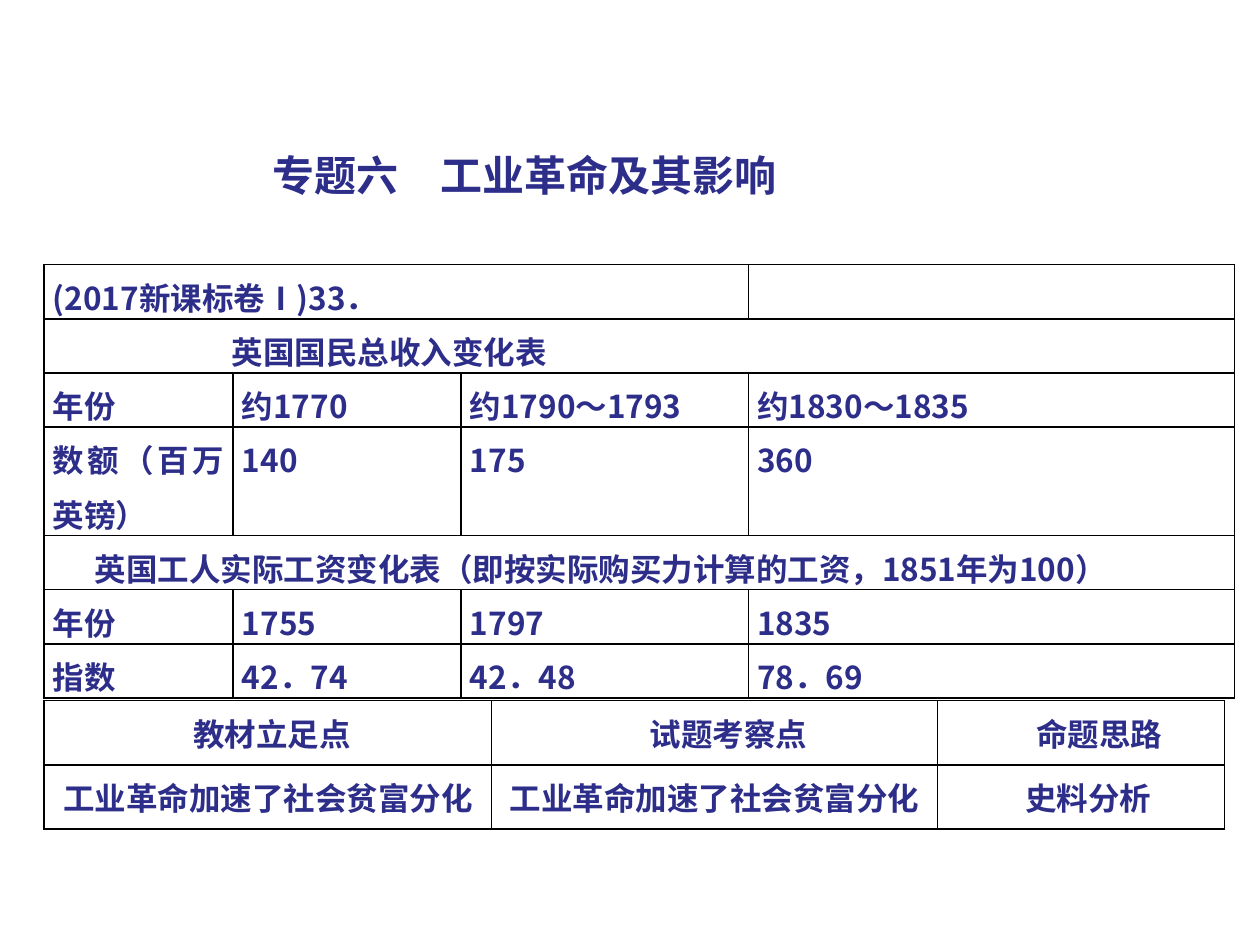
from lxml import etree
from pptx import Presentation
from pptx import util as u
from pptx.dml import color
from pptx.enum import text
from pptx.oxml import ns

FONT = "Noto Sans CJK SC"
INK = "2D2D8A"
BORDER = "000000"
INSET = 0.07


def rgb(value):
    return color.RGBColor.from_string(value)


def add_run(paragraph, words, size):
    run = paragraph.add_run()
    run.text = words
    run.font.size = u.Pt(size)
    run.font.bold = True
    run.font.name = FONT
    run.font.color.rgb = rgb(INK)
    east_asian = etree.SubElement(run.font._element, ns.qn("a:ea"))
    east_asian.set("typeface", FONT)


def add_borders(cell):
    properties = cell._tc.get_or_add_tcPr()
    for index, side in enumerate(("lnL", "lnR", "lnT", "lnB")):
        line = etree.Element(ns.qn(f"a:{side}"), w=str(u.Pt(1)))
        fill = etree.SubElement(line, ns.qn("a:solidFill"))
        etree.SubElement(fill, ns.qn("a:srgbClr"), val=BORDER)
        properties.insert(index, line)


def add_grid(slide, left, top, widths, heights):
    frame = slide.shapes.add_table(
        len(heights), len(widths), u.Inches(left), u.Inches(top),
        u.Inches(sum(widths)), u.Inches(sum(heights)))
    table = frame.table
    table.first_row = False
    table.horz_banding = False
    for column, width in zip(table.columns, widths):
        column.width = u.Inches(width)
    for row, height in zip(table.rows, heights):
        row.height = u.Inches(height)
    for cell in table.iter_cells():
        cell.fill.background()
        add_borders(cell)
        cell.margin_left = cell.margin_right = u.Inches(INSET)
        cell.margin_top = cell.margin_bottom = 0
        cell.text_frame.paragraphs[0].font.size = u.Pt(18)
    return table


def fill_cell(cell, words, alignment, indent=0):
    cell.margin_left = u.Inches(INSET + indent)
    paragraph = cell.text_frame.paragraphs[0]
    paragraph.alignment = alignment
    paragraph.line_spacing = 1.2
    add_run(paragraph, words, 18)


def add_title(slide, left, top, width, height):
    shape = slide.shapes.add_textbox(
        u.Inches(left), u.Inches(top), u.Inches(width), u.Inches(height))
    frame = shape.text_frame
    frame.word_wrap = True
    frame.margin_left = frame.margin_right = 0
    frame.margin_top = frame.margin_bottom = 0
    add_run(frame.paragraphs[0], "专题六　工业革命及其影响", 24)


def add_exam_table(slide, left, top):
    line = 0.43
    heights = [line, line, line, 2 * line, line, line, line]
    table = add_grid(slide, left, top, [1.5, 1.81, 2.28, 3.86], heights)
    headings = {
        0: ("(2017新课标卷Ⅰ)33．", 3, 0),
        1: ("英国国民总收入变化表", 4, 1.42),
        4: ("英国工人实际工资变化表（即按实际购买力计算的工资，1851年为100）", 4, 0.33),
    }
    for row, (words, span, indent) in headings.items():
        table.cell(row, 0).merge(table.cell(row, span - 1))
        fill_cell(table.cell(row, 0), words, text.PP_ALIGN.JUSTIFY, indent)
    records = {
        2: ("年份", "约1770", "约1790～1793", "约1830～1835"),
        3: ("数额（百万英镑）", "140", "175", "360"),
        5: ("年份", "1755", "1797", "1835"),
        6: ("指数", "42．74", "42．48", "78．69"),
    }
    for row, values in records.items():
        for column, words in enumerate(values):
            fill_cell(table.cell(row, column), words, text.PP_ALIGN.JUSTIFY)


def add_analysis_table(slide, left, top):
    table = add_grid(slide, left, top, [3.55, 3.54, 2.28], [0.51, 0.51])
    point = "工业革命加速了社会贫富分化"
    rows = [
        [("教材立足点", 0.07), ("试题考察点", 0.22), ("命题思路", 0.29)],
        [(point, 0), (point, 0), ("史料分析", 0.11)],
    ]
    for row, entries in enumerate(rows):
        for column, (words, indent) in enumerate(entries):
            fill_cell(table.cell(row, column), words, text.PP_ALIGN.CENTER, indent)


def main():
    presentation = Presentation()
    presentation.slide_width = u.Inches(10)
    presentation.slide_height = u.Inches(7.5)
    slide = presentation.slides.add_slide(presentation.slide_layouts[6])
    add_title(slide, 2.16, 1.19, 7.5, 0.48)
    add_exam_table(slide, 0.35, 2.1)
    add_analysis_table(slide, 0.35, 5.56)
    presentation.save("out.pptx")


if __name__ == "__main__":
    main()
